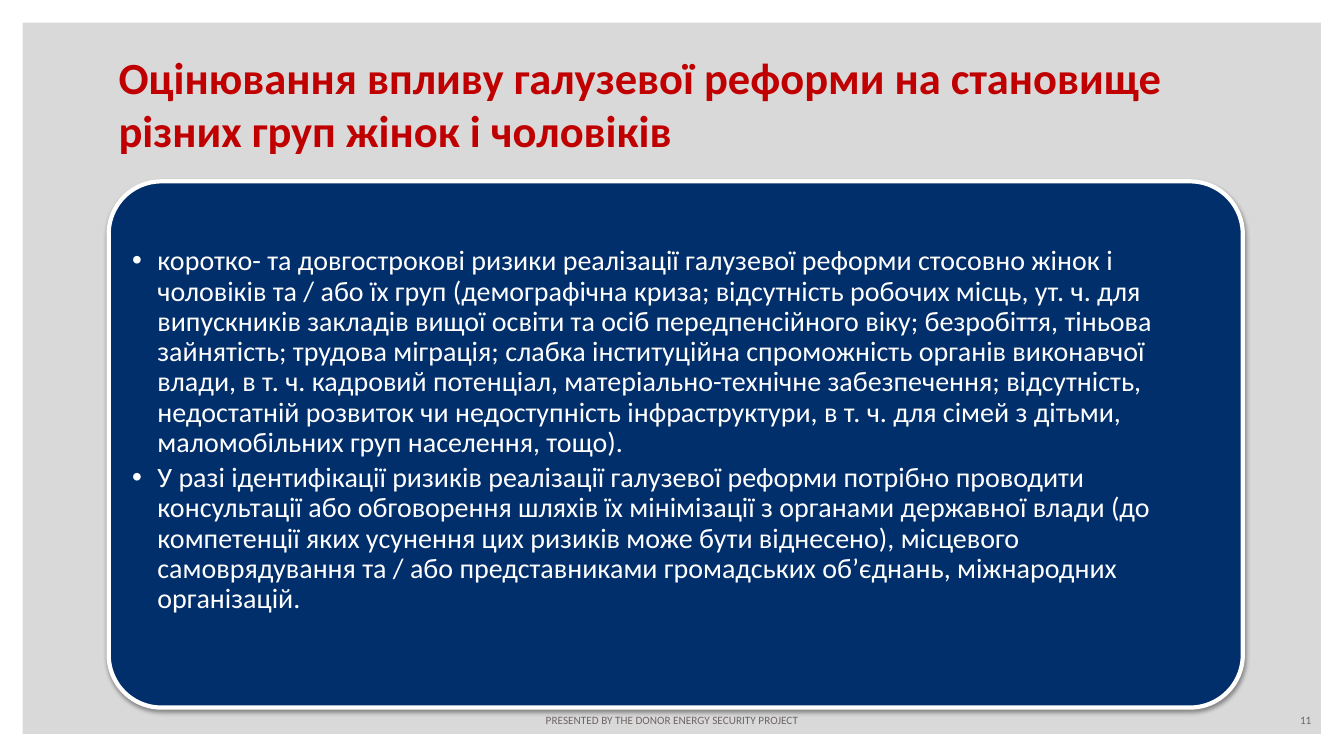
from dataclasses import dataclass

import pptx
import pptx.dml.color
import pptx.enum.shapes
import pptx.enum.text
import pptx.oxml
import pptx.oxml.ns
import pptx.util
from pptx.util import Cm

Pt = pptx.util.Pt
Align = pptx.enum.text.PP_ALIGN
Anchor = pptx.enum.text.MSO_ANCHOR
Shapes = pptx.enum.shapes.MSO_SHAPE


@dataclass(frozen=True)
class Theme:
    font: str = "Calibri"
    background: str = "D9D9D9"
    white: str = "FFFFFF"
    navy: str = "002F6C"
    red: str = "C00000"
    grey: str = "6C6463"
    title_size: float = 31.8
    body_size: float = 20
    footer_size: float = 8


THEME = Theme()

TITLE = "Оцінювання впливу галузевої реформи на становище різних груп жінок і чоловіків"
RISKS = (
    "коротко- та довгострокові ризики реалізації галузевої реформи стосовно жінок і чоловіків "
    "та / або їх груп (демографічна криза; відсутність робочих місць, ут. ч. для випускників "
    "закладів вищої освіти та осіб передпенсійного віку; безробіття, тіньова зайнятість; трудова "
    "міграція; слабка інституційна спроможність органів виконавчої влади, в т. ч. кадровий "
    "потенціал, матеріально-технічне забезпечення; відсутність, недостатній розвиток чи "
    "недоступність інфраструктури, в т. ч. для сімей з дітьми, маломобільних груп населення, тощо).",
    "У разі ідентифікації ризиків реалізації галузевої реформи потрібно проводити консультації "
    "або обговорення шляхів їх мінімізації з органами державної влади (до компетенції яких "
    "усунення цих ризиків може бути віднесено), місцевого самоврядування та / або представниками "
    "громадських об’єднань, міжнародних організацій.",
)
FOOTER = "PRESENTED BY THE DONOR ENERGY SECURITY PROJECT"

BULLET_FORMAT = {"alignment": Align.LEFT, "line_spacing": 0.9, "space_after": Pt(3.6)}


def rgb(value):
    return pptx.dml.color.RGBColor.from_string(value)


def apply(target, values):
    for name, value in values.items():
        setattr(target, name, value)


def write(paragraph, text, size, color, bold=False):
    run = paragraph.add_run()
    run.text = text
    apply(run.font, {"name": THEME.font, "size": Pt(size), "bold": bold})
    run.font.color.rgb = rgb(color)


def add_label(slide, box, text, size, color, alignment, anchor, bold=False):
    shape = slide.shapes.add_textbox(*box)
    apply(shape.text_frame, {"word_wrap": True, "vertical_anchor": anchor})
    paragraph = shape.text_frame.paragraphs[0]
    paragraph.alignment = alignment
    write(paragraph, text, size, color, bold)


def add_panel(slide, kind, box, adjustment, fill):
    shape = slide.shapes.add_shape(kind, *box)
    shape.shadow.inherit = False
    shape.adjustments[0] = adjustment
    shape.fill.solid()
    shape.fill.fore_color.rgb = rgb(fill)
    shape.line.fill.background()
    return shape


def add_outline(shape, color, width):
    shape.line.color.rgb = rgb(color)
    shape.line.width = Pt(width)


def add_soft_shadow(shape):
    effects = shape._element.spPr.find(pptx.oxml.ns.qn("a:effectLst"))
    effects.append(pptx.oxml.parse_xml(
        f'<a:outerShdw {pptx.oxml.ns.nsdecls("a")} blurRad="{Pt(3.1)}" dist="{Pt(1.6)}" '
        'dir="5400000" rotWithShape="0"><a:srgbClr val="000000">'
        '<a:alpha val="38000"/></a:srgbClr></a:outerShdw>'
    ))


def add_bullet(paragraph, indent):
    properties = paragraph._p.get_or_add_pPr()
    properties.set("marL", str(indent))
    properties.set("indent", str(-indent))
    properties.append(pptx.oxml.parse_xml(
        f'<a:buFont {pptx.oxml.ns.nsdecls("a")} typeface="Arial"/>'))
    properties.append(pptx.oxml.parse_xml(
        f'<a:buChar {pptx.oxml.ns.nsdecls("a")} char="•"/>'))


def add_bullets(shape, items):
    frame = shape.text_frame
    apply(frame, {
        "word_wrap": True,
        "vertical_anchor": Anchor.TOP,
        "margin_left": Cm(0.2),
        "margin_right": Cm(0.2),
        "margin_top": Cm(1.26),
        "margin_bottom": Cm(0.2),
    })
    for index, item in enumerate(items):
        paragraph = frame.add_paragraph() if index else frame.paragraphs[0]
        add_bullet(paragraph, Cm(0.64))
        apply(paragraph, BULLET_FORMAT)
        write(paragraph, item, THEME.body_size, THEME.white)


def main():
    presentation = pptx.Presentation()
    apply(presentation, {"slide_width": Cm(33.87), "slide_height": Cm(19.05)})
    slide = presentation.slides.add_slide(presentation.slide_layouts[6])
    slide.background.fill.solid()
    slide.background.fill.fore_color.rgb = rgb(THEME.background)

    add_panel(slide, Shapes.FRAME, (0, 0, Cm(33.87), Cm(19.07)), 0.03, THEME.white)

    footer_style = (THEME.footer_size, THEME.grey)
    add_label(slide, (Cm(11.58), Cm(17.86), Cm(10.72), Cm(0.58)), FOOTER,
              *footer_style, Align.CENTER, Anchor.MIDDLE)
    add_label(slide, (Cm(25.4), Cm(17.86), Cm(7.9), Cm(0.58)), "11",
              *footer_style, Align.RIGHT, Anchor.MIDDLE)
    add_label(slide, (Cm(2.74), Cm(1.13), Cm(28.6), Cm(3)), TITLE,
              THEME.title_size, THEME.red, Align.LEFT, Anchor.TOP, bold=True)

    risks = add_panel(slide, Shapes.ROUNDED_RECTANGLE,
                      (Cm(2.74), Cm(4.57), Cm(28.58), Cm(13.26)), 0.1, THEME.navy)
    add_outline(risks, THEME.white, 3)
    add_soft_shadow(risks)
    add_bullets(risks, RISKS)

    presentation.save("out.pptx")


if __name__ == "__main__":
    main()
